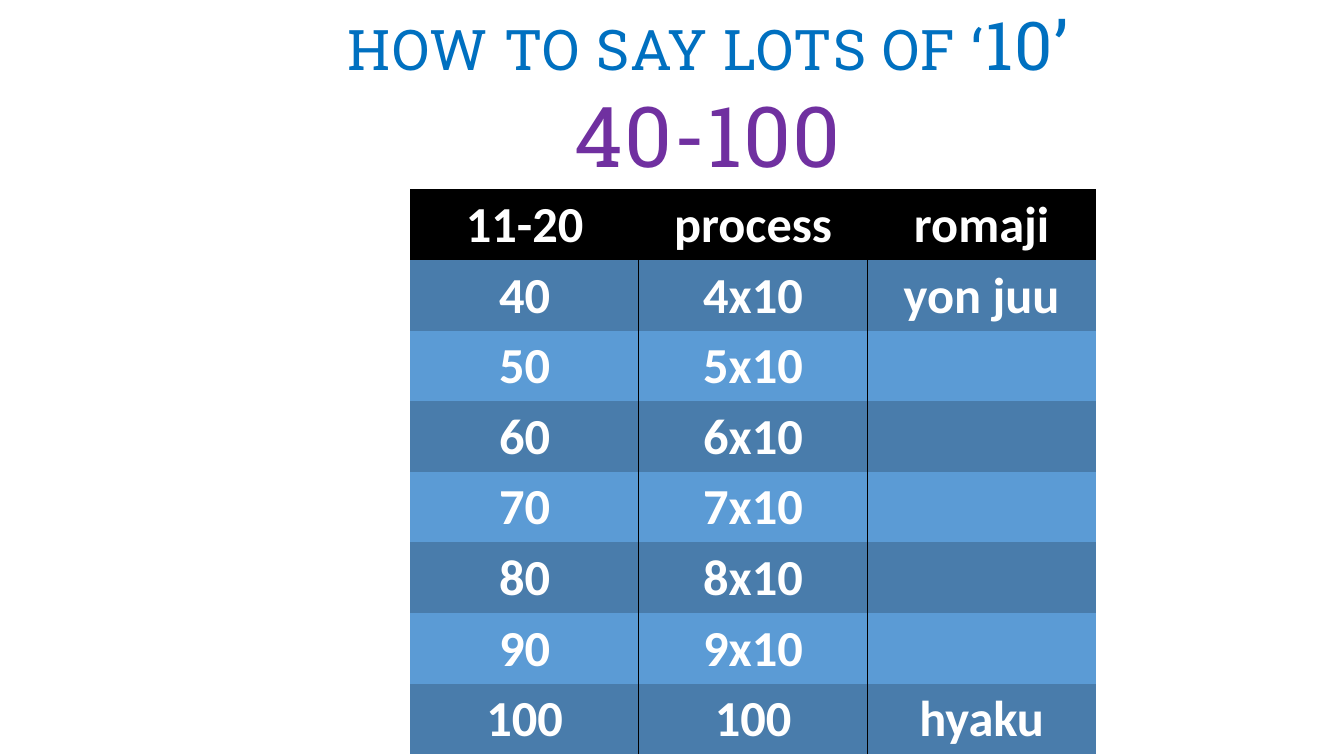
from lxml import etree
from pptx import Presentation
from pptx.dml.color import RGBColor
from pptx.enum.text import MSO_AUTO_SIZE, PP_ALIGN
from pptx.oxml.ns import qn
from pptx.util import Inches, Pt

CENTER = PP_ALIGN.CENTER
FIT = MSO_AUTO_SIZE.SHAPE_TO_FIT_TEXT
PLAIN = "{2D5ABB26-0587-4C30-8999-92F81FD0307C}"  # no style, no grid
COLORS = {"title": "0070C0", "range": "7030A0", "head": "000000",
          "dark": "497CAB", "light": "5B9BD5", "text": "FFFFFF", "line": "000000"}


def color(name):
    return RGBColor.from_string(COLORS[name])


def add_edge(cell, tag, index):
    """Draw a 1 pt line on one side of a cell."""
    line = etree.Element(qn("a:" + tag), w=str(Pt(1)))
    fill = etree.SubElement(line, qn("a:solidFill"))
    etree.SubElement(fill, qn("a:srgbClr"), val=COLORS["line"])
    cell._tc.get_or_add_tcPr().insert(index, line)


deck = Presentation()
deck.slide_width, deck.slide_height = Inches(13.33), Inches(7.5)
slide = deck.slides.add_slide(deck.slide_layouts[6])

# Heading
box = slide.shapes.add_textbox(Inches(3.35), Inches(-0.02), Inches(8.22), Inches(1.92))
frame = box.text_frame
frame.word_wrap = False
frame.auto_size = FIT
title = frame.paragraphs[0]
title.font.name = "Roboto Slab"
title.font.color.rgb = color("title")
span = frame.add_paragraph()
span.alignment = CENTER
span.font.name = "Roboto Slab"
span.font.color.rgb = color("range")
for para, text, size in [(title, "HOW TO SAY LOTS OF ‘", 40),
                         (title, "10’", 48), (span, "40-100", 60)]:
    run = para.add_run()
    run.text = text
    run.font.size = Pt(size)
    run.font._element.set("spc", "100")  # letter spacing of 1 pt

# Number table
rows = [("11-20", "process", "romaji"), ("40", "4x10", "yon juu")]
rows += [(str(n * 10), f"{n}x10", "") for n in range(5, 10)]
rows += [("100", "100", "hyaku")]
count = len(rows[0])
table = slide.shapes.add_table(len(rows), count, Inches(4.07), Inches(1.88),
                               Inches(6.8), Inches(5.6)).table
table.first_row = table.horz_banding = False
table._tbl.tblPr.find(qn("a:tableStyleId")).text = PLAIN

for r, row in enumerate(rows):
    table.rows[r].height = Inches(0.7)
    shade = "head" if r == 0 else "dark" if r % 2 else "light"
    for c, text in enumerate(row):
        cell = table.cell(r, c)
        cell.fill.solid()
        cell.fill.fore_color.rgb = color(shade)
        cell.text = text
        para = cell.text_frame.paragraphs[0]
        para.alignment = CENTER
        para.font.name = "Calibri"
        para.font.size = Pt(36)
        para.font.bold = True
        para.font.color.rgb = color("text")
        # Lines between columns only
        if c > 0:
            add_edge(cell, "lnL", 0)
        if c < count - 1:
            add_edge(cell, "lnR", 1 if c else 0)

deck.save("out.pptx")
